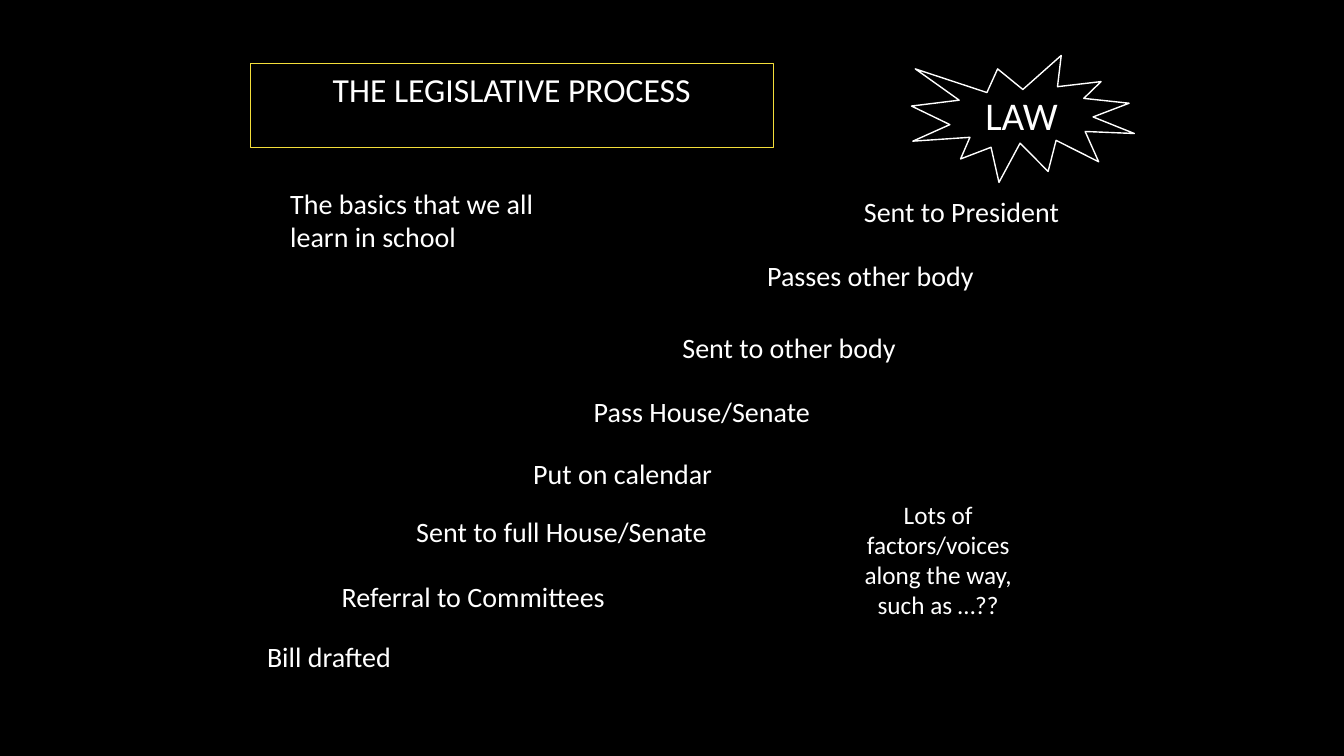
from pptx import Presentation
from pptx.dml.color import RGBColor
from pptx.enum.shapes import MSO_SHAPE
from pptx.enum.text import MSO_ANCHOR, MSO_AUTO_SIZE, PP_ALIGN
from pptx.util import Inches, Pt

BLACK = RGBColor(0x00, 0x00, 0x00)
WHITE = RGBColor(0xFF, 0xFF, 0xFF)
YELLOW = RGBColor(0xF4, 0xDE, 0x3A)
FONT = "Calibri"
LEFT, CENTER = PP_ALIGN.LEFT, PP_ALIGN.CENTER
TOP, MIDDLE = MSO_ANCHOR.TOP, MSO_ANCHOR.MIDDLE
GROW, FIXED = MSO_AUTO_SIZE.SHAPE_TO_FIT_TEXT, MSO_AUTO_SIZE.NONE
BURST = MSO_SHAPE.EXPLOSION1
TITLE_ONLY = 5

TITLE = "THE LEGISLATIVE PROCESS"
INTRO = "The basics that we all learn in school"
QUESTION = "Lots of factors/voices along the way,\nsuch as …??"
GOAL = "LAW"
STEP_HEIGHT = 0.44
STEPS = [
    ("Bill drafted", 2.55, 6.3, 1.48),
    ("Referral to Committees", 3.29, 5.7, 2.91),
    ("Sent to full House/Senate", 4.03, 5.06, 3.15),
    ("Put on calendar", 5.19, 4.48, 2.01),
    ("Pass House/Senate", 5.79, 3.86, 2.41),
    ("Sent to other body", 6.67, 3.23, 2.37),
    ("Passes other body", 7.51, 2.52, 2.31),
    ("Sent to President", 8.47, 1.88, 2.21),
]


def write(shape, text, size=20, align=LEFT, anchor=TOP, wrap=True, fit=GROW):
    frame = shape.text_frame
    frame.word_wrap = wrap
    frame.auto_size = fit
    frame.vertical_anchor = anchor
    paragraph = frame.paragraphs[0]
    paragraph.text = text
    paragraph.alignment = align
    for span in paragraph.runs:
        span.font.name = FONT
        span.font.size = Pt(size)
        span.font.color.rgb = WHITE


def outline(shape, color, width):
    shape.fill.background()
    shape.line.color.rgb = color
    shape.line.width = Pt(width)


def add_text(page, text, left, top, width, height, **style):
    box = page.shapes.add_textbox(*map(Inches, (left, top, width, height)))
    write(box, text, **style)


def main():
    """Build the slide on the steps that turn a bill into law."""
    deck = Presentation()
    deck.slide_width, deck.slide_height = Inches(13.33), Inches(7.5)
    page = deck.slides.add_slide(deck.slide_layouts[TITLE_ONLY])
    page.background.fill.solid()
    page.background.fill.fore_color.rgb = BLACK

    title = page.shapes.title
    title.left, title.top = Inches(2.48), Inches(0.63)
    title.width, title.height = Inches(5.19), Inches(0.5)
    outline(title, YELLOW, 0.75)
    write(title, TITLE, size=24, align=CENTER)

    add_text(page, INTRO, 2.78, 1.8, 2.77, 0.77)
    for text, left, top, width in STEPS:
        add_text(page, text, left, top, width, STEP_HEIGHT, wrap=False)

    burst = page.shapes.add_shape(BURST, *map(Inches, (9.04, 0.55, 2.21, 1.26)))
    burst.shadow.inherit = False
    outline(burst, WHITE, 1)
    write(burst, GOAL, size=28, align=CENTER, anchor=MIDDLE, fit=FIXED)

    add_text(page, QUESTION, 8.35, 4.9, 1.91, 1.31, size=18, align=CENTER)
    deck.save("out.pptx")


if __name__ == "__main__":
    main()
